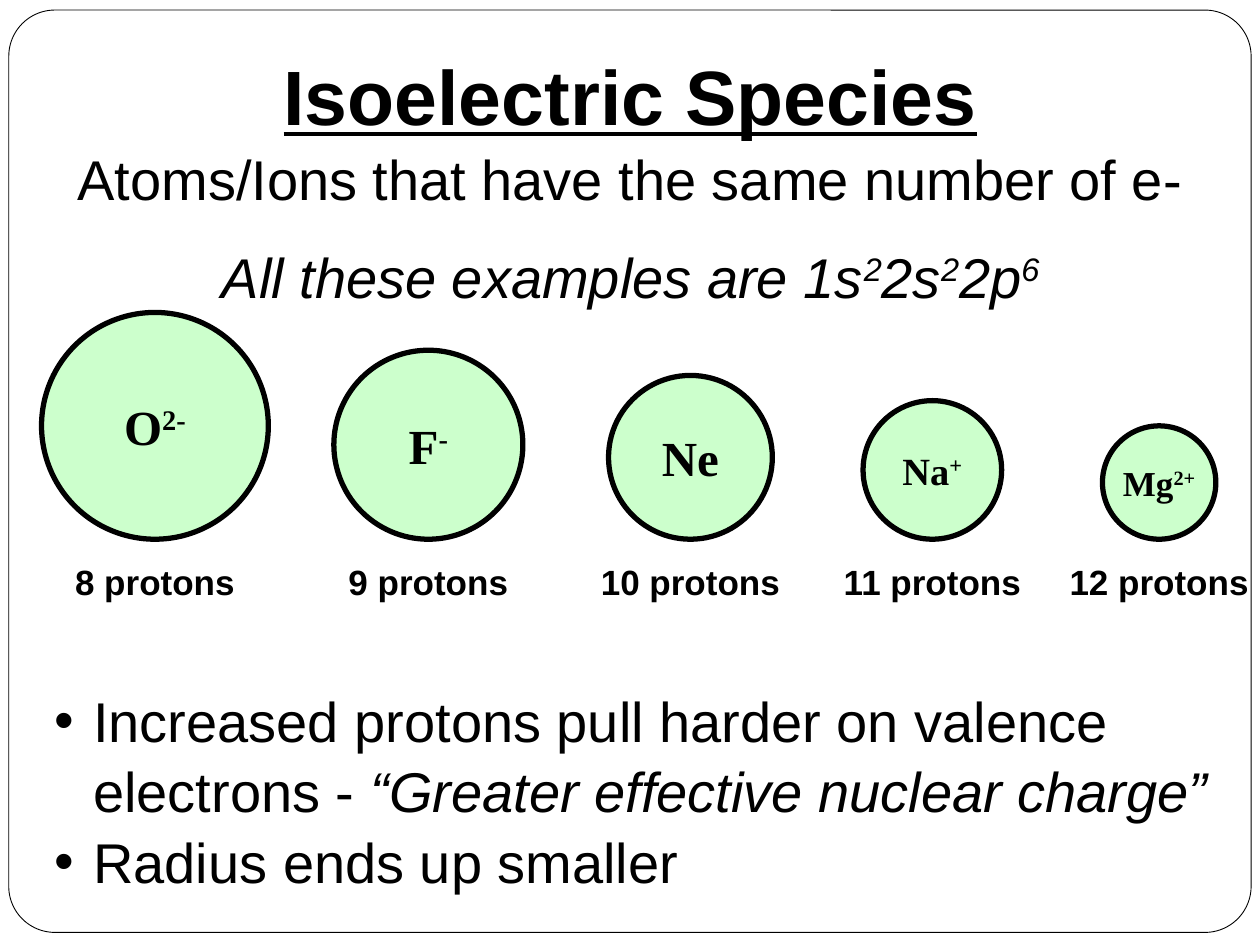
import pptx
import pptx.dml.color
import pptx.enum.shapes
import pptx.enum.text
import pptx.util
from pptx.util import Inches

MSO_SHAPE = pptx.enum.shapes.MSO_SHAPE
ANCHOR = pptx.enum.text.MSO_ANCHOR
ALIGN = pptx.enum.text.PP_ALIGN

# symbol, charge, symbol size, protons, circle diameter, circle centre
SPECIES = [
    ("O", "2-", 28, 8, 1.8, 1.23),
    ("F", "-", 28, 9, 1.5, 3.4),
    ("Ne", "", 28, 10, 1.3, 5.48),
    ("Na", "+", 22, 11, 1.1, 7.4),
    ("Mg", "2+", 20, 12, 0.9, 9.2),
]
CIRCLE_BOTTOM = 4.28
LABEL_TOP, LABEL_WIDTH, LABEL_HEIGHT = 4.4, 1.8, 0.44
LINE_SPACING = 1.05


def rgb(value):
    return pptx.dml.color.RGBColor.from_string(value)


def place(sp, left, top, width, height):
    sp.left, sp.top = Inches(left), Inches(top)
    sp.width, sp.height = Inches(width), Inches(height)


def add_run(p, text, size, font="Arial", bold=False, italic=False,
            underline=False, superscript=False):
    r = p.add_run()
    r.text = text
    r.font.name = font
    r.font.size = pptx.util.Pt(size)
    r.font.bold = bold
    r.font.italic = italic
    r.font.underline = underline
    r.font.color.rgb = rgb("000000")
    if superscript:
        r.font._element.set("baseline", "30000")


def add_outlined_shape(slide, kind, box, line_width, fill=None):
    sp = slide.shapes.add_shape(kind, *[Inches(v) for v in box])
    sp.shadow.inherit = False
    if fill:
        sp.fill.solid()
        sp.fill.fore_color.rgb = rgb(fill)
    else:
        sp.fill.background()
    sp.line.color.rgb = rgb("000000")
    sp.line.width = pptx.util.Pt(line_width)
    return sp


def prepare_text(sp):
    """Give a placeholder fixed-size text set from the top."""
    tf = sp.text_frame
    tf.word_wrap = True
    tf.auto_size = pptx.enum.text.MSO_AUTO_SIZE.NONE
    tf.vertical_anchor = ANCHOR.TOP
    return tf


def next_paragraph(tf, first, space_before=0):
    p = tf.paragraphs[0] if first else tf.add_paragraph()
    p.line_spacing = LINE_SPACING
    p.space_before = pptx.util.Pt(space_before)
    return p


def fill_title(sp):
    place(sp, 0.17, 0.3, 9.67, 2.12)
    tf = prepare_text(sp)
    p = next_paragraph(tf, True)
    add_run(p, "Isoelectric Species", 44, bold=True, underline=True)
    p = next_paragraph(tf, False)
    add_run(p, "Atoms/Ions that have the same number of e-", 32)
    p = next_paragraph(tf, False, space_before=15.5)
    add_run(p, "All these examples are 1s", 32, italic=True)
    for text, raised in [("2", True), ("2s", False), ("2", True),
                         ("2p", False), ("6", True)]:
        add_run(p, text, 32, italic=True, superscript=raised)
    for p in tf.paragraphs:
        p.alignment = ALIGN.CENTER


def fill_body(sp):
    place(sp, 0.33, 5.37, 9.78, 1.72)
    tf = prepare_text(sp)
    p = next_paragraph(tf, True)
    add_run(p, "Increased protons pull harder on valence electrons - ", 32)
    add_run(p, "“Greater effective nuclear charge”", 32, italic=True)
    p = next_paragraph(tf, False)
    add_run(p, "Radius ends up smaller", 32)
    for p in tf.paragraphs:
        pPr = p._p.get_or_add_pPr()
        pPr.set("marL", str(Inches(0.31)))
        pPr.set("indent", str(Inches(-0.31)))


def add_species(slide, symbol, charge, size, protons, diameter, centre):
    """Add a circle with its formula and the proton count below it."""
    box = (centre - diameter / 2, CIRCLE_BOTTOM - diameter, diameter, diameter)
    sp = add_outlined_shape(slide, MSO_SHAPE.OVAL, box, 3, "CCFFCC")
    tf = sp.text_frame
    tf.margin_left = tf.margin_right = tf.margin_top = tf.margin_bottom = 0
    tf.vertical_anchor = ANCHOR.MIDDLE
    p = tf.paragraphs[0]
    p.alignment = ALIGN.CENTER
    add_run(p, symbol, size, "Times New Roman", bold=True)
    if charge:
        add_run(p, charge, size, "Times New Roman", bold=True, superscript=True)

    label = slide.shapes.add_textbox(
        Inches(centre - LABEL_WIDTH / 2), Inches(LABEL_TOP),
        Inches(LABEL_WIDTH), Inches(LABEL_HEIGHT))
    label.text_frame.word_wrap = True
    p = label.text_frame.paragraphs[0]
    p.alignment = ALIGN.CENTER
    add_run(p, f"{protons} protons", 20, bold=True)


def main():
    prs = pptx.Presentation()
    prs.slide_width, prs.slide_height = Inches(10), Inches(7.5)
    slide = prs.slides.add_slide(prs.slide_layouts[1])
    frame = add_outlined_shape(slide, MSO_SHAPE.ROUNDED_RECTANGLE,
                               (0.07, 0.08, 9.86, 7.32), 0.5)
    frame.adjustments[0] = 0.05
    fill_title(slide.shapes.title)
    fill_body(slide.placeholders[1])
    for species in SPECIES:
        add_species(slide, *species)
    prs.save("out.pptx")


if __name__ == "__main__":
    main()
